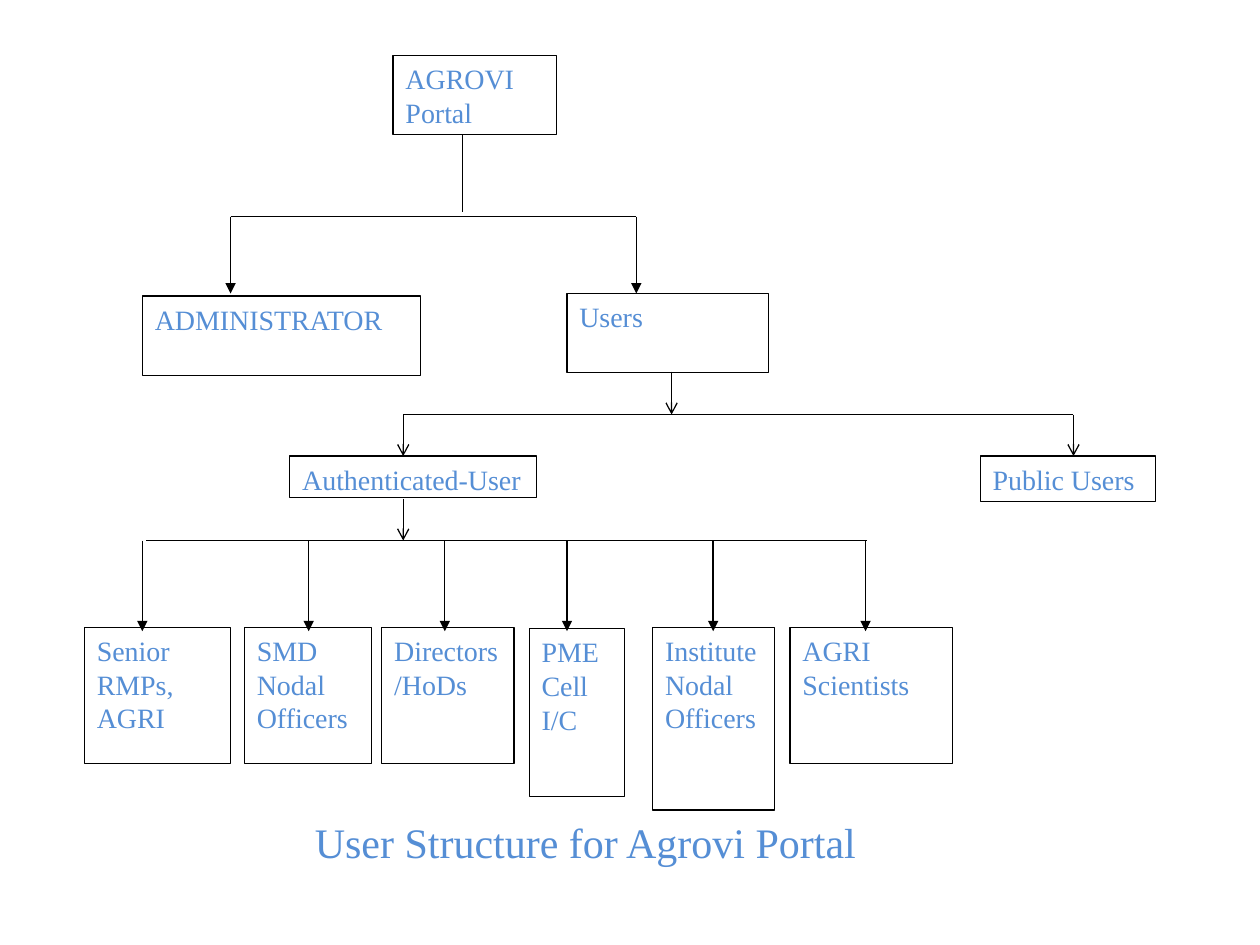
"""Build the user structure chart of a portal."""
from lxml import etree
from pptx import Presentation
from pptx.dml.color import RGBColor
from pptx.enum.shapes import MSO_CONNECTOR, MSO_SHAPE
from pptx.enum.text import MSO_ANCHOR, PP_ALIGN
from pptx.oxml.ns import qn
from pptx.util import Inches, Pt

RECT = MSO_SHAPE.RECTANGLE
STRAIGHT = MSO_CONNECTOR.STRAIGHT
TOP, LEFT = MSO_ANCHOR.TOP, PP_ALIGN.LEFT
BLUE = RGBColor(0x55, 0x8E, 0xD5)
BLACK = RGBColor(0, 0, 0)
WHITE = RGBColor(255, 255, 255)
FONT = "Times New Roman"

TITLE = ("User Structure for Agrovi Portal", 2.4, 6.43, 5.28, 0.5)
BOXES = [
    ("AGROVI Portal", 3.12, 0.44, 1.3, 0.63),
    ("ADMINISTRATOR", 1.13, 2.35, 2.21, 0.63),
    ("Users", 4.5, 2.33, 1.6, 0.63),
    ("Authenticated-User", 2.3, 3.62, 1.96, 0.33),
    ("Public Users", 7.78, 3.62, 1.39, 0.36),
    ("Senior RMPs, AGRI", 0.67, 4.98, 1.16, 1.08),
    ("SMD Nodal Officers", 1.94, 4.98, 1.01, 1.08),
    ("Directors/HoDs", 3.03, 4.98, 1.05, 1.08),
    ("PME Cell I/C", 4.2, 4.99, 0.76, 1.33),
    ("Institute Nodal Officers", 5.18, 4.98, 0.97, 1.45),
    ("AGRI Scientists", 6.27, 4.98, 1.29, 1.08),
]
# Each branch: stem (x, top, bottom, head), bar (left, right, y), drops (xs, bottom, head)
BRANCHES = [
    ((3.67, 1.07, 1.68, None), (1.83, 5.05, 1.72), ((1.83, 5.05), 2.33, "triangle")),
    ((5.33, 2.95, 3.29, "arrow"), (3.2, 8.52, 3.29), ((3.2, 8.52), 3.62, "arrow")),
    ((3.2, 3.96, 4.29, "arrow"), (1.16, 6.88, 4.29),
     ((1.13, 2.45, 3.53, 4.5, 5.66, 6.87), 5.01, "triangle")),
]


def write(sp, text, size, after=0):
    tf = sp.text_frame
    tf.word_wrap = True
    tf.vertical_anchor = TOP
    p = tf.paragraphs[0]
    p.text = text
    p.alignment = LEFT
    p.space_after = Pt(after)
    p.font.name = FONT
    p.font.size = Pt(size)
    p.font.color.rgb = BLUE


def add_box(s, text, *place):
    sp = s.shapes.add_shape(RECT, *map(Inches, place))
    sp.shadow.inherit = False
    sp.fill.solid()
    sp.fill.fore_color.rgb = WHITE
    sp.line.color.rgb = BLACK
    sp.line.width = Pt(0.75)
    write(sp, text, 16, 10)


def add_line(s, x1, y1, x2, y2, head=None):
    cxn = s.shapes.add_connector(STRAIGHT, *map(Inches, (x1, y1, x2, y2)))
    cxn.line.color.rgb = BLACK
    cxn.line.width = Pt(0.75)
    if head:
        etree.SubElement(cxn.line._get_or_add_ln(), qn("a:tailEnd"), type=head)
    etree.SubElement(cxn._element.spPr, qn("a:effectLst"))


def main():
    prs = Presentation()
    prs.slide_width, prs.slide_height = Inches(10), Inches(7.5)
    s = prs.slides.add_slide(prs.slide_layouts[6])
    text, *place = TITLE
    write(s.shapes.add_textbox(*map(Inches, place)), text, 24)
    for box in BOXES:
        add_box(s, *box)
    for (x, top, bottom, head), (left, right, y), (xs, end, drop_head) in BRANCHES:
        add_line(s, x, top, x, bottom, head)
        add_line(s, left, y, right, y)
        for drop_x in xs:
            add_line(s, drop_x, y, drop_x, end, drop_head)
    prs.save("out.pptx")


if __name__ == "__main__":
    main()
